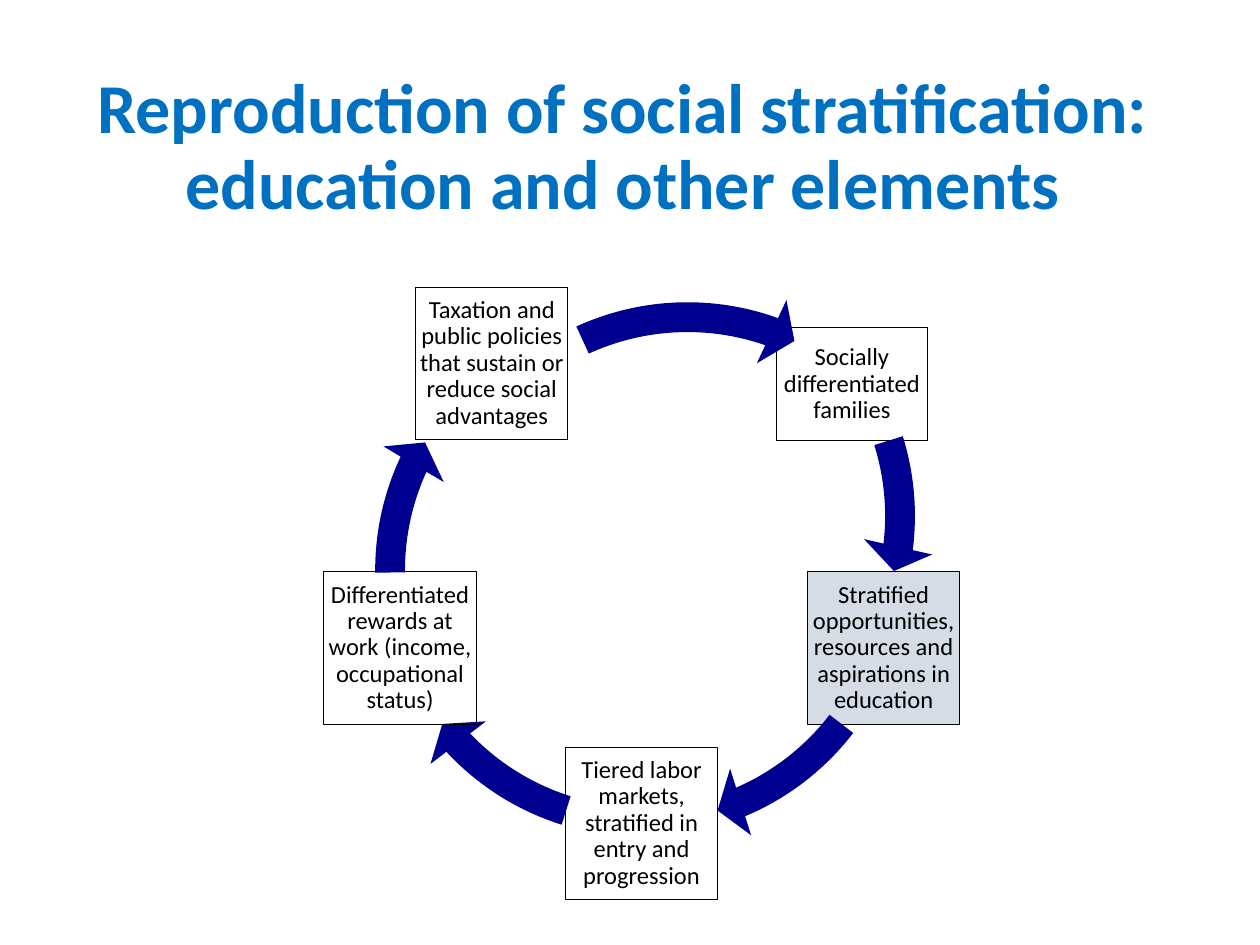
from pptx import Presentation
from pptx.dml.color import RGBColor
from pptx.enum.shapes import MSO_SHAPE
from pptx.enum.text import MSO_ANCHOR, MSO_AUTO_SIZE, PP_ALIGN
from pptx.util import Cm, Pt

FONT = "Calibri"
COLORS = {"title": "0070C0", "text": "000000", "outline": "000000",
          "arrow": "000090", "highlight": "D6DCE5"}
TITLE_LINES = ["Reproduction of social stratification:", "education and other elements"]

SQUARE = (3.07, 3.07)
RING_SIZE = 11.56
RING_CORNER = (7.16, 5.72)
BAND, HEAD_WIDTH, HEAD_ANGLE = 0.052, 0.061, 5.6

STAGES = [
    {"text": "Socially differentiated families", "at": (15.65, 6.6), "size": (3.05, 2.29),
     "ring": (7.29, 4.62), "angles": (342.63, 7.07)},
    {"text": "Stratified opportunities, resources and aspirations in education",
     "at": (16.28, 11.53), "fill": "highlight", "angles": (37.57, 66.9)},
    {"text": "Tiered labor markets, stratified in entry and progression",
     "at": (11.4, 15.06), "angles": (107.5, 136.83)},
    {"text": "Differentiated rewards at work (income, occupational status)",
     "at": (6.53, 11.53), "angles": (179.52, 204.95)},
    {"text": "Taxation and public policies that sustain or reduce social advantages",
     "at": (8.38, 5.79), "ring": (8.08, 5.69), "angles": (245.38, 289.53)},
]


def color(name):
    return RGBColor.from_string(COLORS[name])


def prepare_frame(frame, margin):
    frame.word_wrap = True
    frame.auto_size = MSO_AUTO_SIZE.NONE
    frame.vertical_anchor = MSO_ANCHOR.MIDDLE
    frame.margin_left = frame.margin_right = Cm(margin)
    frame.margin_top = frame.margin_bottom = Cm(margin)
    para = frame.paragraphs[0]
    para.alignment = PP_ALIGN.CENTER
    para.line_spacing = 0.9
    return para


def add_span(para, text, size, name, bold=False):
    span = para.add_run()
    span.text = text
    span.font.name = FONT
    span.font.size = Pt(size)
    span.font.bold = bold
    span.font.color.rgb = color(name)


def fill_title(title):
    title.left, title.top, title.width, title.height = Cm(0), Cm(0.76), Cm(25.1), Cm(4.47)
    para = prepare_frame(title.text_frame, 0.13)
    for index, line in enumerate(TITLE_LINES):
        if index:
            para.add_line_break()
        add_span(para, line, 40, "title", bold=True)


def add_stage_box(page, stage):
    position = map(Cm, stage["at"] + stage.get("size", SQUARE))
    box = page.shapes.add_shape(MSO_SHAPE.RECTANGLE, *position)
    box.shadow.inherit = False
    if "fill" in stage:
        box.fill.solid()
        box.fill.fore_color.rgb = color(stage["fill"])
    else:
        box.fill.background()
    box.line.color.rgb = color("outline")
    box.line.width = Pt(0.5)
    add_span(prepare_frame(box.text_frame, 0.05), stage["text"], 14, "text")


def add_arrow(page, stage):
    left, top = stage.get("ring", RING_CORNER)
    arrow = page.shapes.add_shape(MSO_SHAPE.CIRCULAR_ARROW, Cm(left), Cm(top),
                                  Cm(RING_SIZE), Cm(RING_SIZE))
    start, end = stage["angles"]
    settings = [BAND, HEAD_ANGLE * 0.6, end * 0.6, start * 0.6, HEAD_WIDTH]
    for index, value in enumerate(settings):
        arrow.adjustments[index] = value
    arrow.shadow.inherit = False
    arrow.fill.solid()
    arrow.fill.fore_color.rgb = color("arrow")
    arrow.line.fill.background()


def main():
    deck = Presentation()
    deck.slide_width, deck.slide_height = Cm(25.4), Cm(19.05)
    page = deck.slides.add_slide(deck.slide_layouts[5])
    fill_title(page.shapes.title)
    for stage in STAGES:
        add_stage_box(page, stage)
        add_arrow(page, stage)
    deck.save("out.pptx")


if __name__ == "__main__":
    main()
